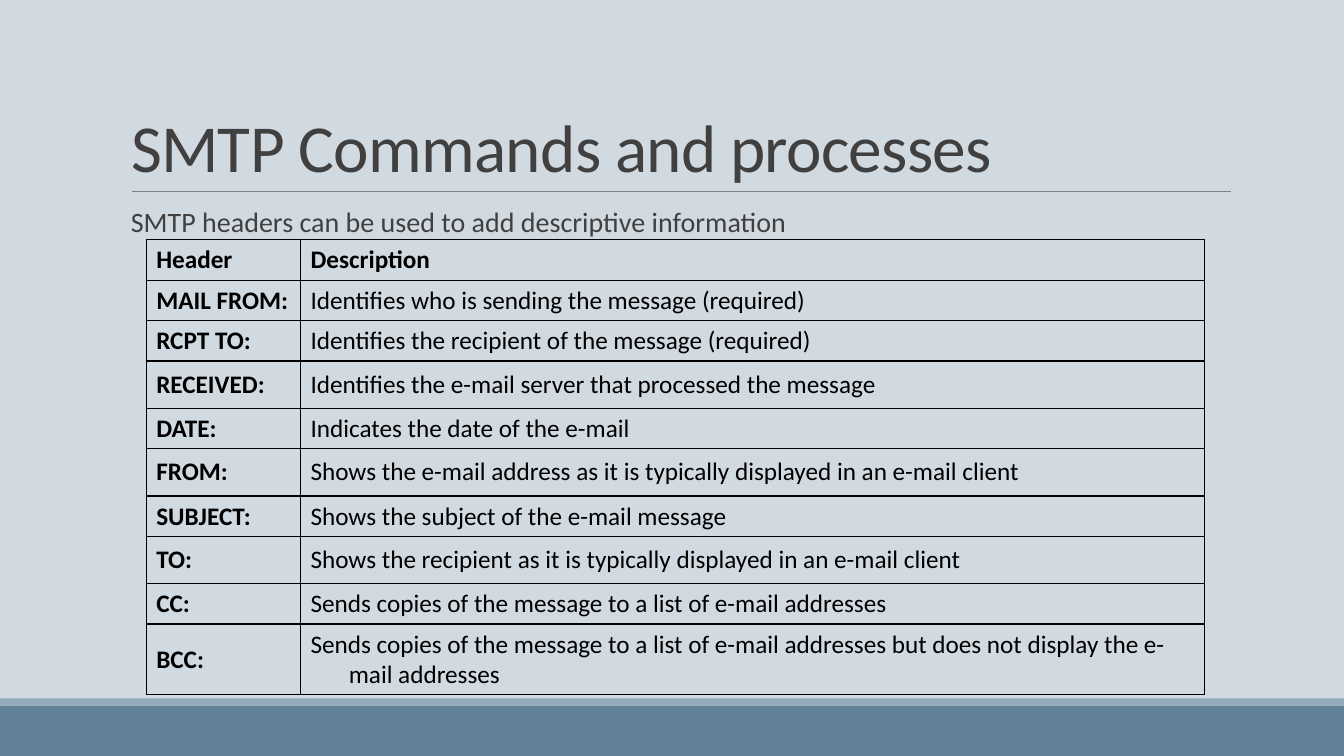
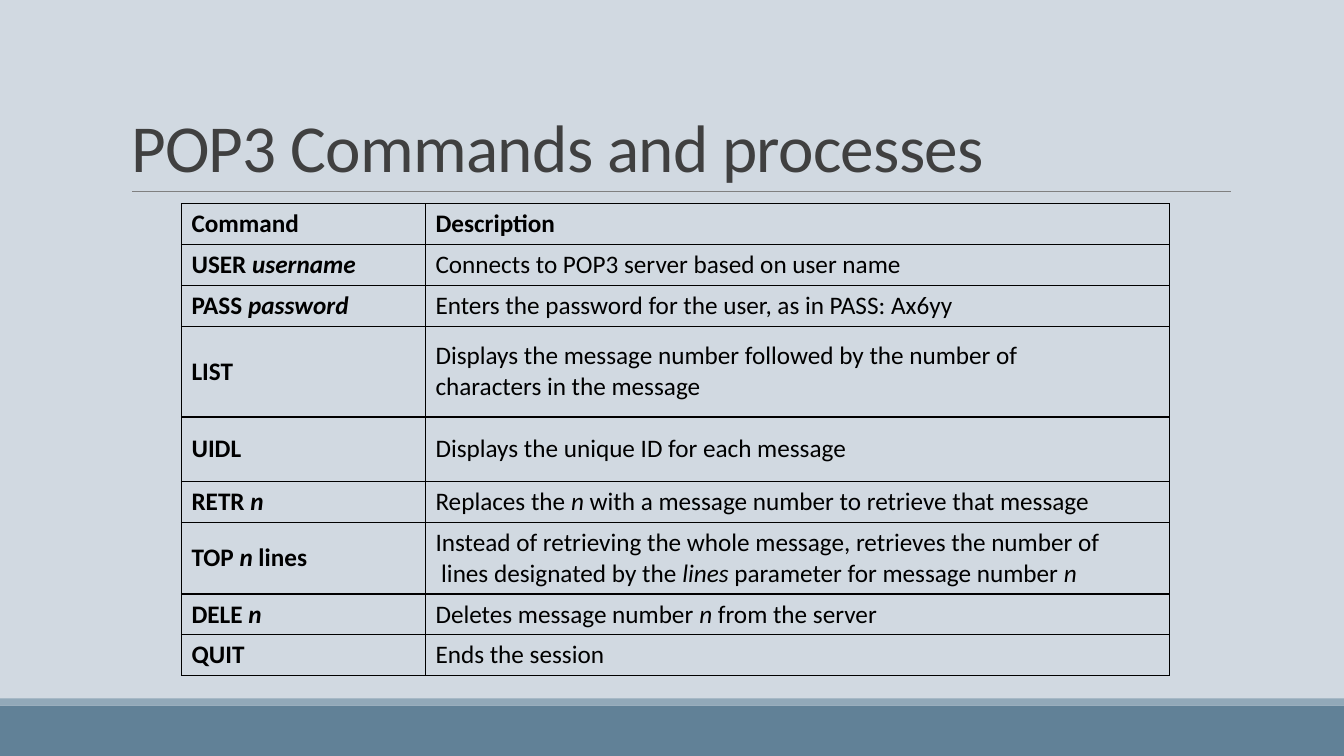
from dataclasses import dataclass
from typing import Optional

from pptx import Presentation
from pptx.dml.color import RGBColor
from pptx.enum.shapes import MSO_CONNECTOR as Connector
from pptx.enum.shapes import MSO_SHAPE as Shape
from pptx.enum.text import MSO_ANCHOR as Anchor
from pptx.enum.text import MSO_AUTO_SIZE as AutoSize
from pptx.enum.text import PP_ALIGN as Align
from pptx.oxml.ns import qn
from pptx.util import Emu, Pt
from lxml.etree import SubElement

EMU_PER_PX = 9144
PAGE_WIDTH, PAGE_HEIGHT = 1333, 750
FONT = "Calibri"
BACKGROUND = "D1D9E1"
TITLE_INK = "404040"
TABLE_INK = "000000"
RULE_GREY = "808080"
HANGING_INDENT = 38


@dataclass(frozen=True)
class Box:
    left: int
    top: int
    width: int
    height: int


@dataclass(frozen=True)
class Band:
    box: Box
    colour: str


@dataclass(frozen=True)
class TablePage:
    title: str
    left: int
    top: int
    columns: tuple[int, ...]
    heights: tuple[int, ...]
    rows: tuple[tuple[str, str], ...]
    lead: Optional[str] = None


TITLE_BOX = Box(120, 31, 1100, 159)
LEAD_BOX = Box(120, 202, 1100, 40)
BANDS = (
    Band(Box(0, 700, PAGE_WIDTH, 50), "618197"),
    Band(Box(0, 693, PAGE_WIDTH, 7), "92A9B9"),
)

PAGES = (
    TablePage(
        title="SMTP Commands and processes",
        lead="SMTP headers can be used to add descriptive information",
        left=145,
        top=238,
        columns=(153, 897),
        heights=(36, 36, 36, 47, 36, 47, 36, 47, 36, 64),
        rows=(
            ("Header", "Description"),
            ("MAIL FROM:", "Identifies who is sending the message (required)"),
            ("RCPT TO:", "Identifies the recipient of the message (required)"),
            ("RECEIVED:", "Identifies the e-mail server that processed the message"),
            ("DATE:", "Indicates the date of the e-mail"),
            ("FROM:", "Shows the e-mail address as it is typically displayed in an e-mail client"),
            ("SUBJECT:", "Shows the subject of the e-mail message"),
            ("TO:", "Shows the recipient as it is typically displayed in an e-mail client"),
            ("CC:", "Sends copies of the message to a list of e-mail addresses"),
            (
                "BCC:",
                "Sends copies of the message to a list of e-mail addresses "
                "but does not display the e-mail addresses",
            ),
        ),
    ),
    TablePage(
        title="POP3 Commands and processes",
        left=180,
        top=202,
        columns=(242, 738),
        heights=(39, 39, 39, 90, 64, 39, 64, 39, 39),
        rows=(
            ("Command", "Description"),
            ("USER *username*", "Connects to POP3 server based on user name"),
            ("PASS *password*", "Enters the password for the user, as in PASS: Ax6yy"),
            (
                "LIST",
                "Displays the message number followed by the number of\n"
                "characters in the message",
            ),
            ("UIDL", "Displays the unique ID for each message"),
            ("RETR *n*", "Replaces the *n* with a message number to retrieve that message"),
            (
                "TOP *n* lines",
                "Instead of retrieving the whole message, retrieves the number of\n"
                " lines designated by the *lines* parameter for message number *n*",
            ),
            ("DELE *n*", "Deletes message number *n* from the server"),
            ("QUIT", "Ends the session"),
        ),
    ),
)


def px(length: int) -> Emu:
    return Emu(length * EMU_PER_PX)


def rgb(colour: str) -> RGBColor:
    return RGBColor.from_string(colour)


def place(box: Box) -> tuple[Emu, Emu, Emu, Emu]:
    return px(box.left), px(box.top), px(box.width), px(box.height)


def write(frame, text: str, *, size: int, colour: str, bold: bool = False,
          line_spacing: float = 1.0, tracking: int = 0, hanging: int = 0) -> None:
    """Fill a text frame; asterisks enclose italic words."""
    for index, line in enumerate(text.split("\n")):
        para = frame.add_paragraph() if index else frame.paragraphs[0]
        para.alignment = Align.LEFT
        para.line_spacing = line_spacing
        if hanging:
            properties = para._p.get_or_add_pPr()
            properties.set("marL", str(px(hanging)))
            properties.set("indent", str(-px(hanging)))
        for position, words in enumerate(line.split("*")):
            if not words:
                continue
            span = para.add_run()
            span.text = words
            span.font.name = FONT
            span.font.size = Pt(size)
            span.font.bold = bold
            span.font.italic = position % 2 == 1
            span.font.color.rgb = rgb(colour)
            if tracking:
                span._r.get_or_add_rPr().set("spc", str(tracking))


def decorate_layout(layout, page) -> None:
    layout.background.fill.solid()
    layout.background.fill.fore_color.rgb = rgb(BACKGROUND)
    decorations = []
    for band in BANDS:
        strip = page.shapes.add_shape(Shape.RECTANGLE, *place(band.box))
        strip.shadow.inherit = False
        strip.fill.solid()
        strip.fill.fore_color.rgb = rgb(band.colour)
        strip.line.fill.background()
        decorations.append(strip)
    rule = page.shapes.add_connector(Connector.STRAIGHT, px(131), px(190), px(1221), px(190))
    rule.line.color.rgb = rgb(RULE_GREY)
    rule.line.width = Pt(0.5)
    SubElement(rule._element.spPr, qn("a:effectLst"))
    decorations.append(rule)
    for decoration in decorations:
        layout.shapes.element.append(decoration._element)


def add_title(page, text: str) -> None:
    title = page.shapes.title
    title.left, title.top, title.width, title.height = place(TITLE_BOX)
    frame = title.text_frame
    frame.word_wrap = True
    frame.auto_size = AutoSize.NONE
    frame.vertical_anchor = Anchor.BOTTOM
    write(frame, text, size=48, colour=TITLE_INK, line_spacing=0.85, tracking=-50)


def add_lead(page, text: str) -> None:
    frame = page.shapes.add_textbox(*place(LEAD_BOX)).text_frame
    frame.word_wrap = True
    frame.margin_left = px(10)
    frame.margin_right = 0
    write(frame, text, size=20, colour=TITLE_INK, line_spacing=0.9)


def format_cell(cell) -> None:
    cell.vertical_anchor = Anchor.MIDDLE
    properties = cell._tc.get_or_add_tcPr()
    for side in ("a:lnL", "a:lnR", "a:lnT", "a:lnB"):
        border = SubElement(properties, qn(side), w=str(Pt(1)))
        fill = SubElement(border, qn("a:solidFill"))
        SubElement(fill, qn("a:srgbClr"), val=TABLE_INK)
    cell.fill.background()


def add_command_table(page, content: TablePage) -> None:
    box = Box(content.left, content.top, sum(content.columns), sum(content.heights))
    table = page.shapes.add_table(len(content.rows), len(content.columns), *place(box)).table
    table.first_row = False
    table.horz_banding = False
    for column, width in zip(table.columns, content.columns):
        column.width = px(width)
    for row, height in zip(table.rows, content.heights):
        row.height = px(height)
    for row_index, texts in enumerate(content.rows):
        for column_index, text in enumerate(texts):
            cell = table.cell(row_index, column_index)
            format_cell(cell)
            write(cell.text_frame, text, size=18, colour=TABLE_INK,
                  bold=row_index == 0 or column_index == 0, hanging=HANGING_INDENT)


def main() -> None:
    deck = Presentation()
    deck.slide_width, deck.slide_height = px(PAGE_WIDTH), px(PAGE_HEIGHT)
    layout = deck.slide_layouts.get_by_name("Title Only")
    for index, content in enumerate(PAGES):
        page = deck.slides.add_slide(layout)
        if index == 0:
            decorate_layout(layout, page)
        add_title(page, content.title)
        if content.lead:
            add_lead(page, content.lead)
        add_command_table(page, content)
    deck.save("out.pptx")


if __name__ == "__main__":
    main()
